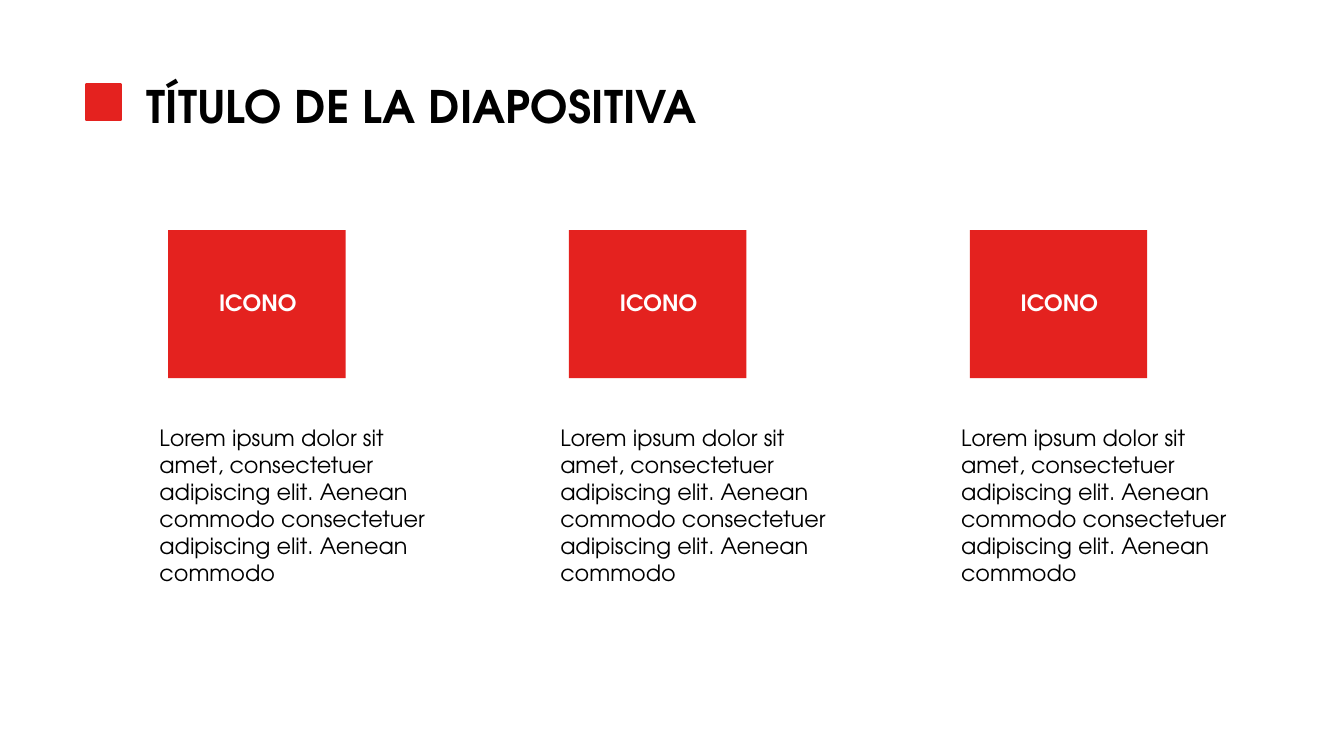
from dataclasses import dataclass

from pptx import Presentation
from pptx.dml.color import RGBColor
from pptx.enum.shapes import MSO_SHAPE
from pptx.enum.text import MSO_ANCHOR, MSO_AUTO_SIZE, PP_ALIGN
from pptx.util import Cm, Pt


@dataclass(frozen=True)
class Theme:
    """Colours, font and type sizes of the slide."""

    red: RGBColor = RGBColor(0xE4, 0x22, 0x1F)
    black: RGBColor = RGBColor(0, 0, 0)
    white: RGBColor = RGBColor(255, 255, 255)
    font: str = "TeX Gyre Adventor"
    title_size: int = 32
    text_size: int = 16


class SlideBuilder:
    """Draws styled elements on the current slide."""

    def __init__(self, slide, theme):
        self.slide = slide
        self.theme = theme

    def set_text(self, shape, text, size, color, bold):
        text_frame = shape.text_frame
        text_frame.text = text
        text_frame.word_wrap = True
        text_frame.auto_size = MSO_AUTO_SIZE.SHAPE_TO_FIT_TEXT
        text_frame.vertical_anchor = MSO_ANCHOR.TOP
        paragraph = text_frame.paragraphs[0]
        paragraph.alignment = PP_ALIGN.LEFT
        font = paragraph.runs[0].font
        font.name = self.theme.font
        font.size = Pt(size)
        font.bold = bold
        font.color.rgb = color

    def title(self, text, left, top, width, height):
        shape = self.slide.shapes.title
        shape.left, shape.top = Cm(left), Cm(top)
        shape.width, shape.height = Cm(width), Cm(height)
        self.set_text(shape, text, self.theme.title_size, self.theme.black, True)

    def rectangle(self, left, top, width, height, line_width=0):
        shape = self.slide.shapes.add_shape(
            MSO_SHAPE.RECTANGLE, Cm(left), Cm(top), Cm(width), Cm(height)
        )
        shape.shadow.inherit = False
        shape.fill.solid()
        shape.fill.fore_color.rgb = self.theme.red
        if line_width:
            shape.line.color.rgb = self.theme.red
            shape.line.width = Pt(line_width)
        else:
            shape.line.fill.background()

    def text(self, text, left, top, width, height, color, bold=False):
        shape = self.slide.shapes.add_textbox(
            Cm(left), Cm(top), Cm(width), Cm(height)
        )
        self.set_text(shape, text, self.theme.text_size, color, bold)


def main():
    presentation = Presentation()
    presentation.slide_width = Cm(33.87)
    presentation.slide_height = Cm(19.05)
    slide = presentation.slides.add_slide(presentation.slide_layouts[5])
    theme = Theme()
    builder = SlideBuilder(slide, theme)

    builder.title("TÍTULO DE LA DIAPOSITIVA", 3.45, 1.85, 22.96, 1.63)
    builder.rectangle(2.16, 2.13, 0.89, 0.89, line_width=1.5)

    description = (
        "Lorem ipsum dolor sit amet, consectetuer adipiscing elit. "
        "Aenean commodo consectetuer adipiscing elit. Aenean commodo"
    )
    first_column, column_pitch = 3.77, 10.1
    for column in range(3):
        left = first_column + column * column_pitch
        builder.text(description, left, 10.57, 7.29, 4.37, theme.black)
        builder.rectangle(left + 0.47, 5.8, 4.47, 3.73)
        builder.text("ICONO", left + 1.5, 7.16, 3.07, 0.94, theme.white, bold=True)

    presentation.save("out.pptx")


if __name__ == "__main__":
    main()
